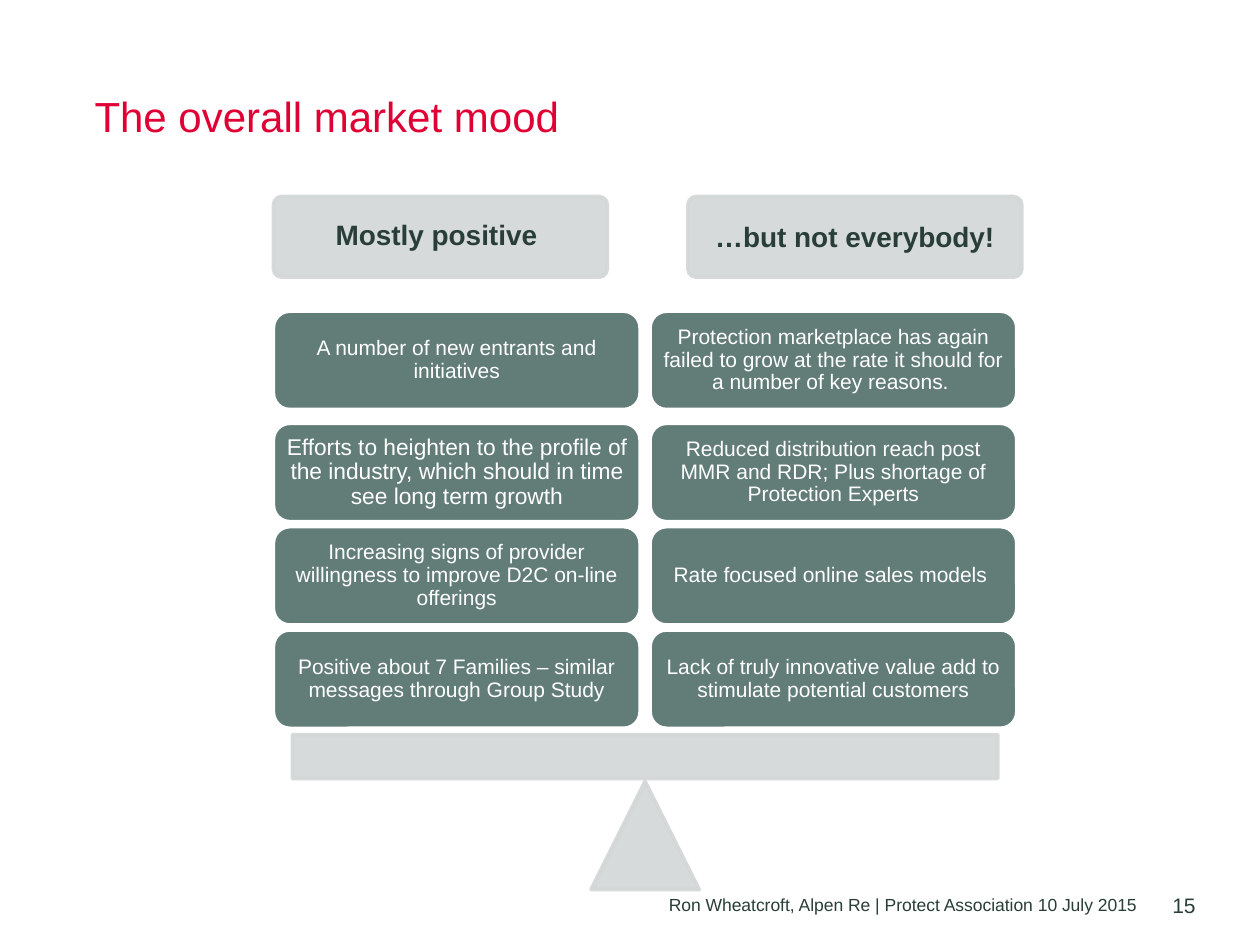
"""Build the slide that weighs positive and negative market views on a balance."""
from typing import NamedTuple

import lxml.etree
import pptx
import pptx.dml.color
import pptx.enum.shapes
import pptx.enum.text
import pptx.oxml.ns
import pptx.util

Inches = pptx.util.Inches
RGBColor = pptx.dml.color.RGBColor
Shapes = pptx.enum.shapes.MSO_SHAPE
Align = pptx.enum.text.PP_ALIGN
Anchor = pptx.enum.text.MSO_ANCHOR

RED = RGBColor(0xE0, 0x00, 0x34)
DARK_GREEN = RGBColor(0x28, 0x3E, 0x36)
SLATE = RGBColor(0x62, 0x7D, 0x77)
PALE_GREY = RGBColor(0xD3, 0xD7, 0xD6)
WHITE = RGBColor(0xFF, 0xFF, 0xFF)


class Box(NamedTuple):
    left: float
    top: float
    width: float
    height: float

    def lengths(self) -> list:
        return [Inches(value) for value in self]


class Weight(NamedTuple):
    text: str
    size: int = 12


class Side(NamedTuple):
    heading: str
    heading_left: float
    heading_spacing: float
    weights_left: float
    weights: list


SIDES = [
    Side("Mostly positive ", 2.17, 0.9, 2.17, [
        Weight("A number of new entrants and initiatives"),
        Weight("Efforts to heighten to the profile of the industry, "
               "which should in time see long term growth", 13),
        Weight("Increasing signs of provider willingness to improve D2C on-line offerings"),
        Weight("Positive about 7 Families – similar messages through Group Study"),
    ]),
    Side("…but not everybody!", 5.46, 1.0, 5.16, [
        Weight("Protection marketplace has again failed to grow at the rate "
               "it should for a number of key reasons. "),
        Weight("Reduced distribution reach post MMR and RDR; Plus shortage of Protection Experts"),
        Weight("Rate focused online sales models "),
        Weight("Lack of truly innovative value add to stimulate potential customers"),
    ]),
]
WEIGHT_TOPS = [2.47, 3.36, 4.18, 5.0]


def write(frame, text: str, *, size: int, color: RGBColor, bold: bool = False,
          align=Align.CENTER, anchor=Anchor.MIDDLE, spacing: float = 1.0,
          inset: float = 0) -> None:
    frame.word_wrap = True
    frame.auto_size = pptx.enum.text.MSO_AUTO_SIZE.NONE
    frame.vertical_anchor = anchor
    frame.margin_left = frame.margin_right = Inches(inset)
    frame.margin_top = frame.margin_bottom = Inches(inset)
    paragraph = frame.paragraphs[0]
    paragraph.alignment = align
    paragraph.line_spacing = spacing
    run = paragraph.add_run()
    run.text = text
    run.font.name = "Arial"
    run.font.size = pptx.util.Pt(size)
    run.font.bold = bold
    run.font.color.rgb = color


def add_block(slide, preset, box: Box, fill: RGBColor, line: RGBColor, opacity: int = 100):
    block = slide.shapes.add_shape(preset, *box.lengths())
    block.shadow.inherit = False
    block.fill.solid()
    block.fill.fore_color.rgb = fill
    block.line.color.rgb = line
    block.line.width = pptx.util.Pt(2)
    if opacity < 100:
        for color in block.element.spPr.iter(pptx.oxml.ns.qn("a:srgbClr")):
            alpha = lxml.etree.SubElement(color, pptx.oxml.ns.qn("a:alpha"))
            alpha.set("val", str(opacity * 1000))
    return block


def add_pale_block(slide, preset, box: Box):
    return add_block(slide, preset, box, PALE_GREY, PALE_GREY, 90)


def add_side(slide, side: Side) -> None:
    heading = add_pale_block(slide, Shapes.ROUNDED_RECTANGLE,
                             Box(side.heading_left, 1.56, 2.65, 0.64))
    heading.adjustments[0] = 0.1
    write(heading.text_frame, side.heading, size=16, color=DARK_GREEN, bold=True,
          spacing=side.heading_spacing, inset=0.07)
    for top, weight in zip(WEIGHT_TOPS, side.weights):
        block = add_block(slide, Shapes.ROUNDED_RECTANGLE,
                          Box(side.weights_left, top, 2.91, 0.78), SLATE, WHITE)
        write(block.text_frame, weight.text, size=weight.size, color=WHITE,
              spacing=0.9, inset=0.05)


def add_footer(slide, text: str, box: Box, size: int) -> None:
    footer = slide.shapes.add_textbox(*box.lengths())
    write(footer.text_frame, text, size=size, color=DARK_GREEN,
          align=Align.RIGHT, anchor=Anchor.BOTTOM)


def main() -> None:
    deck = pptx.Presentation()
    deck.slide_width, deck.slide_height = Inches(10), Inches(7.5)
    slide = deck.slides.add_slide(deck.slide_layouts[5])

    title = slide.shapes.title
    title.left, title.top, title.width, title.height = Box(0.75, 0.76, 8.74, 0.76).lengths()
    write(title.text_frame, "The overall market mood", size=24, color=RED,
          align=Align.LEFT, anchor=Anchor.TOP, spacing=0.9)

    add_pale_block(slide, Shapes.ISOSCELES_TRIANGLE, Box(4.69, 6.2, 0.86, 0.86))
    add_pale_block(slide, Shapes.RECTANGLE, Box(2.32, 5.83, 5.6, 0.35))
    for side in SIDES:
        add_side(slide, side)

    add_footer(slide, "Ron Wheatcroft, Alpen Re | Protect Association 10 July 2015",
               Box(2.56, 7.11, 6.46, 0.15), 10)
    add_footer(slide, "15", Box(9.25, 7.08, 0.24, 0.2), 12)
    deck.save("out.pptx")


if __name__ == "__main__":
    main()
